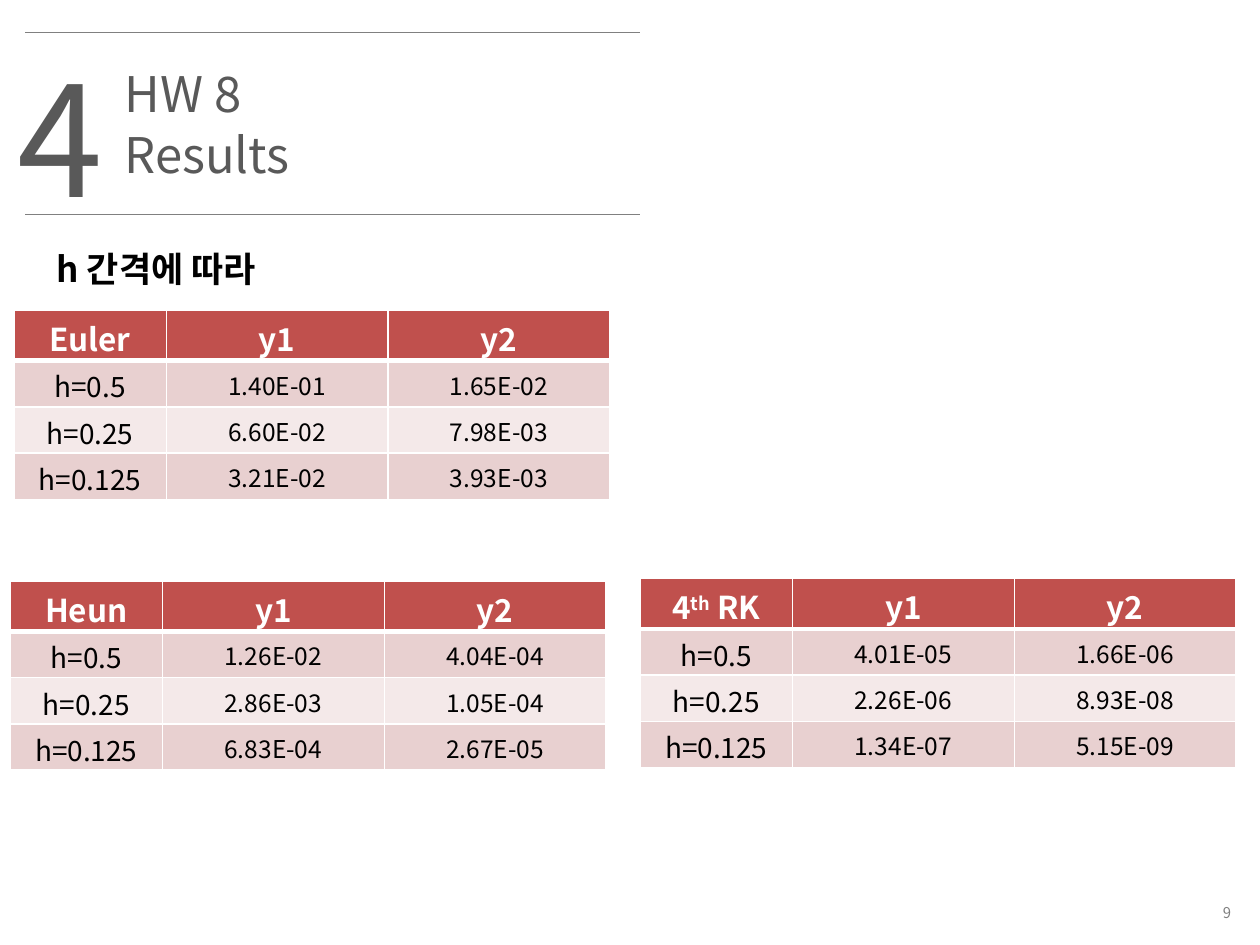
from dataclasses import dataclass

from lxml import etree
from pptx import Presentation
from pptx import util as u
from pptx.dml.color import RGBColor
from pptx.enum import shapes, text
from pptx.oxml.ns import qn

COLUMNS, ROWS = 100, 75  # grid of tenths of an inch


@dataclass(frozen=True)
class Theme:
    font: str = "Noto Sans CJK KR"
    ink: str = "000000"
    heading: str = "595959"
    muted: str = "808080"
    white: str = "FFFFFF"
    header_fill: str = "C0504D"
    band_fills: tuple = ("E8D0D0", "F4E9E9")
    numeral_pt: float = 88
    title_pt: float = 28
    label_pt: float = 20
    header_pt: float = 18
    step_pt: float = 16
    value_pt: float = 14
    page_pt: float = 8.5
    leading: float = 1.28


def apply(target, values):
    for name, value in values.items():
        setattr(target, name, value)


class ResultsSlide:
    def __init__(self, deck, theme):
        self.theme = theme
        self.unit = deck.slide_width / COLUMNS
        self.slide = deck.slides.add_slide(deck.slide_layouts[5])

    def grid(self, *lengths):
        return [u.Emu(round(length * self.unit)) for length in lengths]

    def add_words(self, paragraph, runs, size, color, bold=False, align=text.PP_ALIGN.LEFT):
        """Runs are (words, baseline shift in thousandths of a percent)."""
        paragraph.alignment = align
        for words, baseline in runs:
            run = paragraph.add_run()
            run.text = words
            apply(run.font, {"name": self.theme.font, "size": u.Pt(size), "bold": bold})
            run.font.color.rgb = RGBColor.from_string(color)
            properties = run.font._element
            etree.SubElement(properties, qn("a:ea")).set("typeface", self.theme.font)
            if baseline:
                properties.set("baseline", str(baseline))

    def fill_box(self, box, words, place, size, color, leading=None,
                 anchor=text.MSO_ANCHOR.TOP, **style):
        apply(box, dict(zip(("left", "top", "width", "height"), self.grid(*place))))
        apply(box.text_frame, {
            "word_wrap": True, "auto_size": text.MSO_AUTO_SIZE.NONE,
            "vertical_anchor": anchor,
            "margin_left": u.Inches(0.1), "margin_right": u.Inches(0.1),
            "margin_top": u.Inches(0.05), "margin_bottom": u.Inches(0.05)})
        paragraph = box.text_frame.paragraphs[0]
        paragraph.line_spacing = u.Pt(leading or size * self.theme.leading)
        self.add_words(paragraph, [(words, 0)], size, color, **style)

    def title(self, words, place, size, color):
        self.fill_box(self.slide.shapes.title, words, place, size, color)

    def label(self, words, place, size, color, **style):
        box = self.slide.shapes.add_textbox(0, 0, 0, 0)
        self.fill_box(box, words, place, size, color, **style)

    def rule(self, left, right, row):
        line = self.slide.shapes.add_connector(
            shapes.MSO_CONNECTOR.STRAIGHT, *self.grid(left, row, right, row))
        line.line.width = u.Pt(0.75)
        line.line.color.rgb = RGBColor.from_string(self.theme.muted)
        etree.SubElement(line._element.spPr, qn("a:effectLst"))

    def borders(self, cell, widths):
        """Draw white edges, given in points for left, right, top and bottom."""
        properties = cell._tc.get_or_add_tcPr()
        for index, (side, width) in enumerate(zip("LRTB", widths)):
            edge = etree.Element(qn(f"a:ln{side}"), w=str(u.Pt(width)))
            solid = etree.SubElement(edge, qn("a:solidFill"))
            etree.SubElement(solid, qn("a:srgbClr")).set("val", self.theme.white)
            properties.insert(index, edge)

    def cell(self, cell, runs, row, column):
        theme = self.theme
        header, value = row == 0, row > 0 and column > 0
        fill = theme.header_fill if header else theme.band_fills[(row - 1) % 2]
        size = theme.header_pt if header else theme.value_pt if value else theme.step_pt
        side = u.Inches(0.01 if value else 0.1)
        apply(cell, {
            "margin_left": side, "margin_right": side, "margin_bottom": 0,
            "margin_top": u.Inches(0.01 if value else 0.04),
            "vertical_anchor": text.MSO_ANCHOR.MIDDLE if value else text.MSO_ANCHOR.TOP})
        cell.fill.solid()
        cell.fill.fore_color.rgb = RGBColor.from_string(fill)
        self.borders(cell, (1, 1, 3 if row == 1 else 1, 3 if header else 1))
        self.add_words(cell.text_frame.paragraphs[0], runs, size,
                       theme.white if header else theme.ink,
                       bold=header, align=text.PP_ALIGN.CENTER)

    def error_table(self, method, errors, left, top):
        widths, heights = (12.1, 17.6, 17.6), (4, 3.67, 3.67, 3.67)
        table = self.slide.shapes.add_table(
            len(heights), len(widths),
            *self.grid(left, top, sum(widths), sum(heights))).table
        for column, width in zip(table.columns, self.grid(*widths)):
            column.width = width
        for row, height in zip(table.rows, self.grid(*heights)):
            row.height = height
        steps = ("h=0.5", "h=0.25", "h=0.125")
        lines = [("y1", "y2"), *errors]
        for r, (head, values) in enumerate(zip((method, *steps), lines)):
            for c, content in enumerate((head, *values)):
                runs = [(content, 0)] if isinstance(content, str) else content
                self.cell(table.cell(r, c), runs, r, c)


METHODS = (
    ("Euler", 1.1, 24.6,
     (("1.40E-01", "1.65E-02"), ("6.60E-02", "7.98E-03"), ("3.21E-02", "3.93E-03"))),
    ("Heun", 0.8, 46.1,
     (("1.26E-02", "4.04E-04"), ("2.86E-03", "1.05E-04"), ("6.83E-04", "2.67E-05"))),
    ([("4", 0), ("th", 30000), (" RK", 0)], 50.8, 45.9,
     (("4.01E-05", "1.66E-06"), ("2.26E-06", "8.93E-08"), ("1.34E-07", "5.15E-09"))),
)


def main():
    deck = Presentation()
    apply(deck, {"slide_width": u.Inches(COLUMNS / 10), "slide_height": u.Inches(ROWS / 10)})
    theme = Theme()
    page = ResultsSlide(deck, theme)

    page.title("HW 8", (8.9, 4.2, 57.3, 5.7), theme.title_pt, theme.heading)
    page.label("Results", (8.9, 11.4, 45.7, 4), theme.title_pt, theme.heading, leading=19)
    page.label("4", (0.4, 2, 29.9, 15.8), theme.numeral_pt, theme.heading)
    for row in (2.6, 17):
        page.rule(2, 50.8, row)
    for method, left, top, errors in METHODS:
        page.error_table(method, errors, left, top)
    page.label("h 간격에 따라", (3.5, 18.9, 37, 4.4), theme.label_pt, theme.ink, bold=True)
    page.label("9", (77.6, 71, 21.1, 2.7), theme.page_pt, theme.muted,
               anchor=text.MSO_ANCHOR.MIDDLE, align=text.PP_ALIGN.RIGHT)
    deck.save("out.pptx")


if __name__ == "__main__":
    main()
